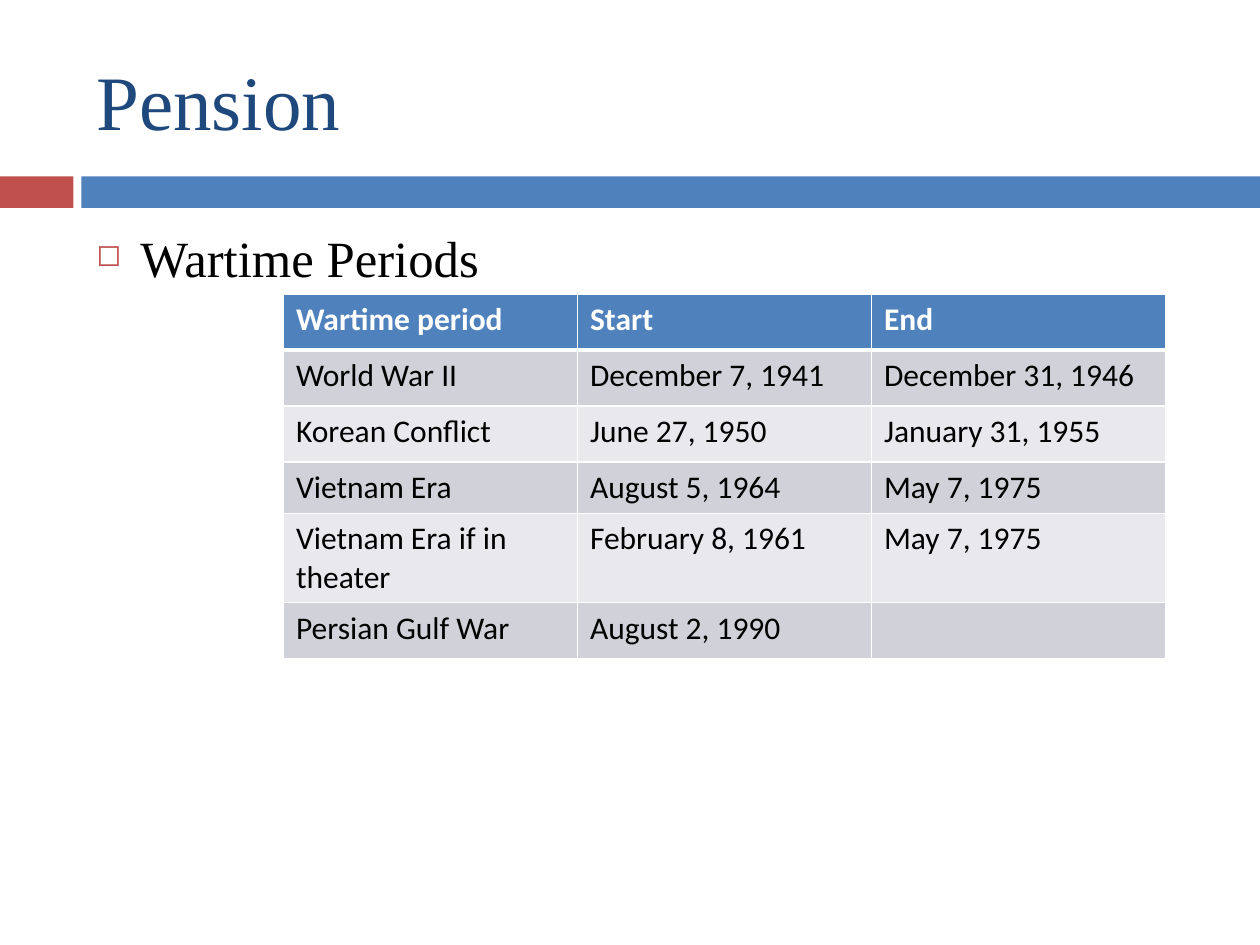
from dataclasses import dataclass

from lxml.etree import SubElement
from pptx import Presentation
from pptx.dml.color import RGBColor
from pptx.enum.shapes import MSO_SHAPE
from pptx.enum.text import MSO_ANCHOR
from pptx.oxml.ns import qn
from pptx.util import Pt


@dataclass(frozen=True)
class Theme:
    navy: str = "1F497D"
    blue: str = "4F81BD"
    red: str = "C0504D"
    black: str = "000000"
    white: str = "FFFFFF"
    dark_band: str = "D1D1DA"
    light_band: str = "E9E9ED"
    serif: str = "Times New Roman"
    sans: str = "Calibri"
    title_size: float = 44
    body_size: float = 29
    table_size: float = 18


theme = Theme()


def write_text(frame, text, *, font, size, color, bold=False):
    para = frame.paragraphs[0]
    span = para.add_run()
    span.text = text
    span.font.name = font
    span.font.size = Pt(size)
    span.font.bold = bold
    span.font.color.rgb = RGBColor.from_string(color)
    return para


def add_border(cell, side, width):
    line = SubElement(cell._tc.get_or_add_tcPr(), qn(f"a:ln{side}"), w=str(Pt(width)))
    fill = SubElement(line, qn("a:solidFill"))
    SubElement(fill, qn("a:srgbClr"), val=theme.white)


deck = Presentation()
deck.slide_width, deck.slide_height = Pt(720), Pt(540)
page = deck.slides.add_slide(deck.slide_layouts[6])

# Divider bars
for left, width, color in ((0, 42, theme.red), (46.5, 673.5, theme.blue)):
    bar = page.shapes.add_shape(MSO_SHAPE.RECTANGLE, Pt(left), Pt(100.8), Pt(width), Pt(18))
    bar.shadow.inherit = False
    bar.fill.solid()
    bar.fill.fore_color.rgb = RGBColor.from_string(color)
    bar.line.fill.background()

# Title
title_box = page.shapes.add_textbox(Pt(48), Pt(18), Pt(642), Pt(78))
title_box.text_frame.word_wrap = True
title_box.text_frame.vertical_anchor = MSO_ANCHOR.MIDDLE
write_text(title_box.text_frame, "Pension", font=theme.serif,
           size=theme.title_size, color=theme.navy)

# Bulleted heading
body_box = page.shapes.add_textbox(Pt(48), Pt(126), Pt(642), Pt(354))
body_box.text_frame.word_wrap = True
para = write_text(body_box.text_frame, "Wartime Periods", font=theme.serif,
                  size=theme.body_size, color=theme.black)
para.space_before = Pt(7)
properties = para._p.get_or_add_pPr()
properties.set("marL", str(Pt(25.2)))
properties.set("indent", str(-Pt(25.2)))
bullet_color = SubElement(properties, qn("a:buClr"))
SubElement(bullet_color, qn("a:srgbClr"), val=theme.red)
SubElement(properties, qn("a:buSzPct"), val="60000")
SubElement(properties, qn("a:buChar"), char="◻")

# Table of wartime periods
periods = (
    ("Wartime period", "Start", "End"),
    ("World War II", "December 7, 1941", "December 31, 1946"),
    ("Korean Conflict", "June 27, 1950", "January 31, 1955"),
    ("Vietnam Era", "August 5, 1964", "May 7, 1975"),
    ("Vietnam Era if in theater", "February 8, 1961", "May 7, 1975"),
    ("Persian Gulf War", "August 2, 1990", ""),
)
row_heights = (32, 32, 32, 29.5, 51, 32)
table = page.shapes.add_table(len(periods), 3, Pt(162), Pt(168),
                              Pt(504), Pt(sum(row_heights))).table
for column in table.columns:
    column.width = Pt(168)

for row_index, (period, height) in enumerate(zip(periods, row_heights)):
    table.rows[row_index].height = Pt(height)
    is_header = row_index == 0
    band = theme.dark_band if row_index % 2 else theme.light_band
    for column_index, text in enumerate(period):
        cell = table.cell(row_index, column_index)
        add_border(cell, "L", 1)
        add_border(cell, "R", 1)
        add_border(cell, "T", 3 if row_index == 1 else 1)
        add_border(cell, "B", 3 if is_header else 1)
        cell.fill.solid()
        cell.fill.fore_color.rgb = RGBColor.from_string(theme.blue if is_header else band)
        if text:
            write_text(cell.text_frame, text, font=theme.sans, size=theme.table_size,
                       color=theme.white if is_header else theme.black, bold=is_header)

deck.save("out.pptx")
